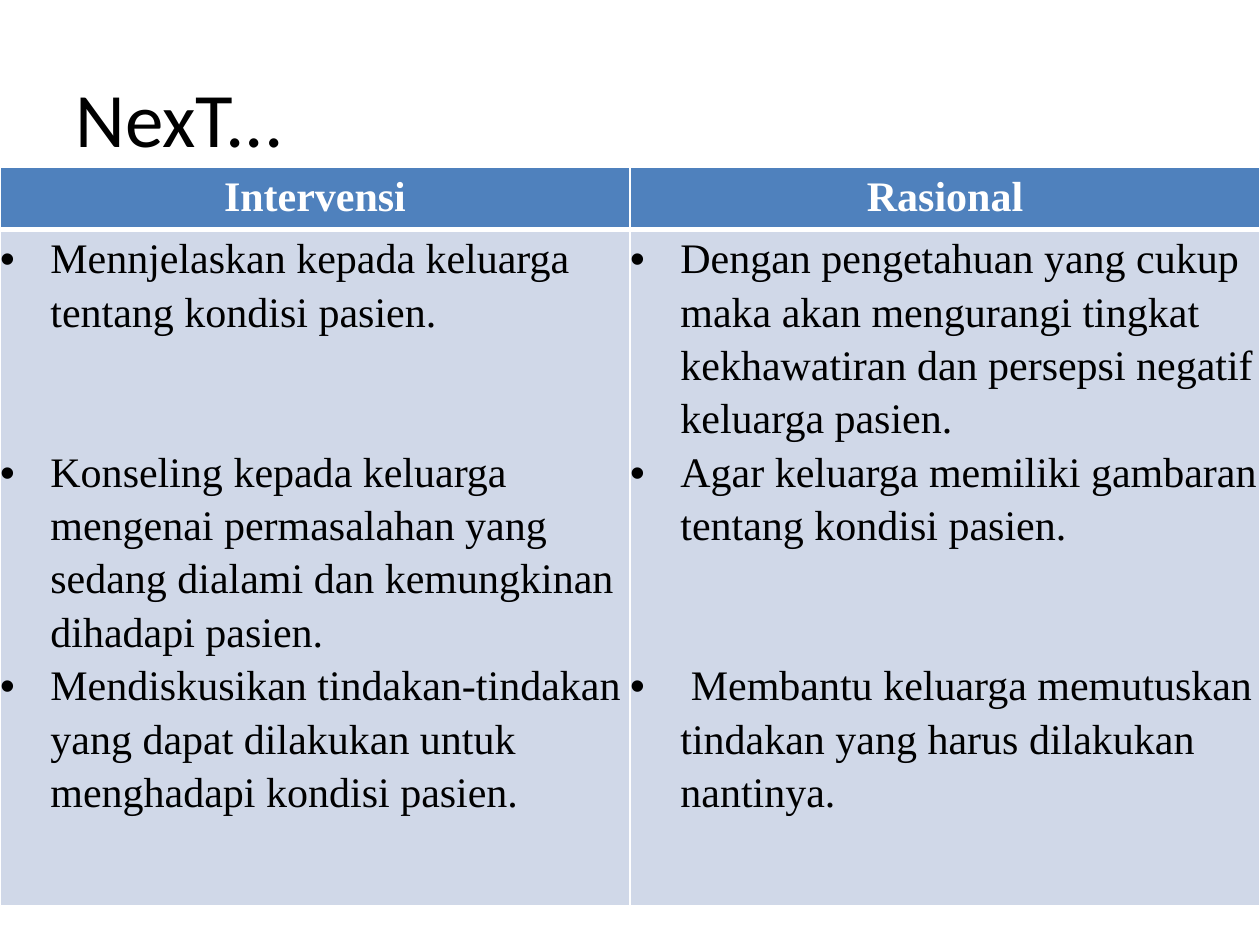
from lxml.etree import SubElement
from pptx import Presentation
from pptx.dml.color import RGBColor as Color
from pptx.enum.text import MSO_ANCHOR as Anchor, PP_ALIGN as Align
from pptx.oxml.ns import qn
from pptx.util import Inches, Pt

# Content: each item is (blank lines above it, text)
TITLE = "NexT..."
COLUMNS = [
    ("Intervensi", [
        (0, "Mennjelaskan kepada keluarga tentang kondisi pasien."),
        (2, "Konseling kepada keluarga mengenai permasalahan yang sedang "
            "dialami dan kemungkinan dihadapi pasien."),
        (0, "Mendiskusikan tindakan-tindakan yang dapat dilakukan untuk "
            "menghadapi kondisi pasien."),
    ]),
    ("Rasional", [
        (0, "Dengan pengetahuan yang cukup maka akan mengurangi tingkat "
            "kekhawatiran dan persepsi negatif keluarga pasien."),
        (0, "Agar keluarga memiliki gambaran tentang kondisi pasien."),
        (2, " Membantu keluarga memutuskan tindakan yang harus dilakukan "
            "nantinya."),
    ]),
]

THEME = {
    "title": {"name": "Calibri", "size": Pt(44), "color": "000000"},
    "header": {"name": "Times New Roman", "size": Pt(24), "color": "FFFFFF",
               "bold": True},
    "body": {"name": "Times New Roman", "size": Pt(24), "color": "000000",
             "bold": False},
    "header_fill": "4F81BD",
    "body_fill": "D0D8E8",
    "border": "FFFFFF",
}
PAGE_WIDTH, PAGE_HEIGHT = 10, 7.5
ROW_HEIGHTS = [0.49, 5.37]
TABLE_TOP = 1.33
LINE_SPACING = 1.15
LINE_PITCH = 30.5  # points from one body line to the next
INDENT = 0.4


def write(para, text, style, **layout):
    """Add one run in a theme style and lay out its paragraph."""
    span = para.add_run()
    span.text = text
    for name, value in THEME[style].items():
        if name == "color":
            span.font.color.rgb = Color.from_string(value)
        else:
            setattr(span.font, name, value)
    for name, value in layout.items():
        setattr(para, name, value)


def add_bullet(para):
    props = para._p.get_or_add_pPr()
    props.set("marL", str(Inches(INDENT)))
    props.set("indent", str(-Inches(INDENT)))
    SubElement(props, qn("a:buFont"), typeface="Arial")
    SubElement(props, qn("a:buChar"), char="•")


def format_cell(cell, fill, top, bottom):
    """Set margins, borders and fill; top and bottom are widths in points."""
    for side in ("left", "right", "top", "bottom"):
        setattr(cell, f"margin_{side}", 0)
    props = cell._tc.get_or_add_tcPr()
    for edge, width in {"L": 1, "R": 1, "T": top, "B": bottom}.items():
        line = SubElement(props, qn(f"a:ln{edge}"), w=str(Pt(width)))
        paint = SubElement(line, qn("a:solidFill"))
        SubElement(paint, qn("a:srgbClr"), val=THEME["border"])
    cell.fill.solid()
    cell.fill.fore_color.rgb = Color.from_string(THEME[fill])


deck = Presentation()
deck.slide_width, deck.slide_height = Inches(PAGE_WIDTH), Inches(PAGE_HEIGHT)
page = deck.slides.add_slide(deck.slide_layouts[6])

# Title
box = page.shapes.add_textbox(Inches(0.5), Inches(0.3), Inches(9), Inches(1.25))
frame = box.text_frame
frame.word_wrap = True
frame.vertical_anchor = Anchor.MIDDLE
write(frame.paragraphs[0], TITLE, "title", alignment=Align.JUSTIFY)

# Table
table = page.shapes.add_table(
    len(ROW_HEIGHTS), len(COLUMNS), 0, Inches(TABLE_TOP),
    Inches(PAGE_WIDTH), Inches(sum(ROW_HEIGHTS))).table
for row, height in zip(table.rows, ROW_HEIGHTS):
    row.height = Inches(height)

for index, (heading, items) in enumerate(COLUMNS):
    table.columns[index].width = Inches(PAGE_WIDTH / len(COLUMNS))
    header, body = table.cell(0, index), table.cell(1, index)
    format_cell(header, "header_fill", top=1, bottom=3)
    format_cell(body, "body_fill", top=3, bottom=1)
    write(header.text_frame.paragraphs[0], heading, "header",
          alignment=Align.CENTER, line_spacing=LINE_SPACING, space_after=Pt(10))

    # Bulleted items
    for number, (blank_lines, text) in enumerate(items):
        frame = body.text_frame
        para = frame.add_paragraph() if number else frame.paragraphs[0]
        write(para, text, "body", line_spacing=LINE_SPACING,
              space_before=Pt(blank_lines * LINE_PITCH))
        add_bullet(para)

deck.save("out.pptx")
